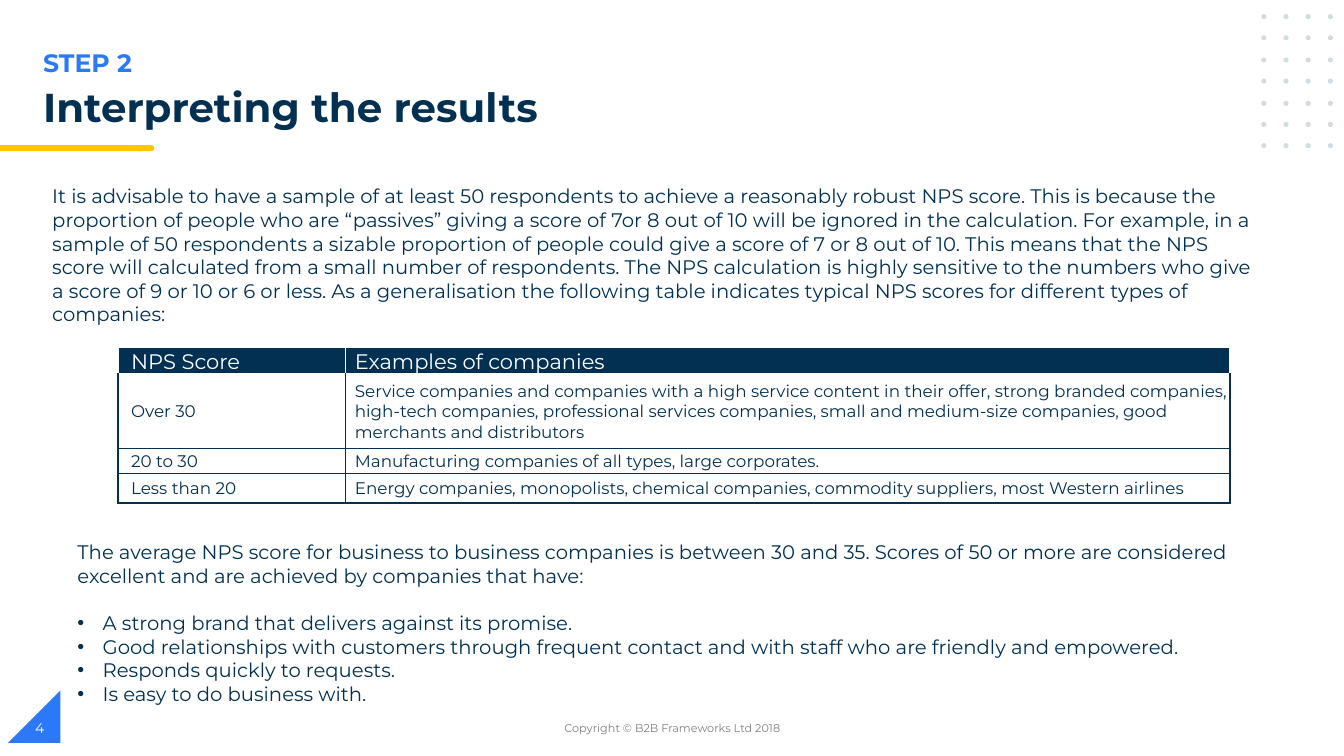
from dataclasses import dataclass

from lxml import etree
from pptx import Presentation
from pptx.dml.color import RGBColor
from pptx.enum.shapes import MSO_SHAPE
from pptx.enum.text import MSO_ANCHOR, PP_ALIGN
from pptx.oxml.ns import qn
from pptx.util import Pt

PX = 9144
FONT = "Montserrat"
NAVY, BLUE, YELLOW = "023053", "2B79F8", "FFC600"
WHITE, GREY, DOT = "FFFFFF", "7F7F7F", "D1DBE0"
TRIANGLE, OVAL = MSO_SHAPE.RIGHT_TRIANGLE, MSO_SHAPE.OVAL
BAR, BAR_END = MSO_SHAPE.RECTANGLE, MSO_SHAPE.FLOWCHART_TERMINATOR
TOP, MIDDLE = MSO_ANCHOR.TOP, MSO_ANCHOR.MIDDLE
LEFT, CENTER = PP_ALIGN.LEFT, PP_ALIGN.CENTER


@dataclass
class Decoration:
    kind: MSO_SHAPE
    box: tuple[int, int, int, int]
    color: str


@dataclass
class Label:
    box: tuple[int, int, int, int]
    text: str
    size: float
    color: str = NAVY
    bold: bool = False
    align: PP_ALIGN = LEFT
    anchor: MSO_ANCHOR = TOP
    spacing: float = 1.0
    bullets: tuple[str, ...] = ()


@dataclass
class ScoreRow:
    height: int
    score: str
    examples: str
    size: int = 12
    color: str = NAVY
    fill: str = ""
    border: str = NAVY
    top_border: str = NAVY


DECORATIONS = [
    Decoration(TRIANGLE, (8, 685, 52, 52), BLUE),
    *(
        Decoration(OVAL, (1251 + 22 * column, 14 + round(21.4 * row), 5, 5), DOT)
        for row in range(7)
        for column in range(4)
    ),
    Decoration(BAR_END, (134, 144, 19, 6), YELLOW),
    Decoration(BAR, (0, 144, 141, 6), YELLOW),
]

LABELS = [
    Label((33, 42, 669, 40), "STEP 2", 18, BLUE, bold=True),
    Label((33, 82, 956, 56), "Interpreting the results", 28.8, bold=True, spacing=0.9),
    Label(
        (42, 178, 1216, 175),
        "It is advisable to have a sample of at least 50 respondents to achieve a "
        "reasonably robust NPS score. This is because the proportion of people who are "
        "“passives” giving a score of 7or 8 out of 10 will be ignored in the calculation. "
        "For example, in a sample of 50 respondents a sizable proportion of people could "
        "give a score of 7 or 8 out of 10. This means that the NPS score will calculated "
        "from a small number of respondents. The NPS calculation is highly sensitive to "
        "the numbers who give a score of 9 or 10 or 6 or less. As a generalisation the "
        "following table indicates typical NPS scores for different types of companies:",
        14,
    ),
    Label(
        (67, 531, 1208, 175),
        "The average NPS score for business to business companies is between 30 and 35. "
        "Scores of 50 or more are considered excellent and are achieved by companies that have:",
        14,
        bullets=(
            "A strong brand that delivers against its promise.",
            "Good relationships with customers through frequent contact and with staff "
            "who are friendly and empowered.",
            "Responds quickly to requests.",
            "Is easy to do business with.",
        ),
    ),
    Label((442, 702, 450, 40), "Copyright © B2B Frameworks Ltd 2018", 8, GREY,
          align=CENTER, anchor=MIDDLE),
    Label((25, 702, 300, 40), "4", 10, WHITE, anchor=MIDDLE),
]

TABLE_LEFT, TABLE_TOP = 117, 345
COLUMN_WIDTHS = (226, 877)
CELL_INDENTS = (13, 9)
SCORE_ROWS = [
    ScoreRow(25, "NPS Score", "Examples of companies", 15, WHITE, NAVY, WHITE, WHITE),
    ScoreRow(
        74,
        "Over 30",
        "Service companies and companies with a high service content in their offer, "
        "strong branded companies, high-tech companies, professional services companies, "
        "small and medium-size companies, good merchants and distributors",
        top_border=WHITE,
    ),
    ScoreRow(25, "20 to 30", "Manufacturing companies of all types, large corporates."),
    ScoreRow(
        29,
        "Less than 20",
        "Energy companies, monopolists, chemical companies, commodity suppliers, "
        "most Western airlines",
    ),
]


def rgb(color: str) -> RGBColor:
    return RGBColor.from_string(color)


def set_font(paragraph, size: float, color: str, bold: bool = False) -> None:
    font = paragraph.font
    font.name, font.size, font.bold = FONT, Pt(size), bold
    font.color.rgb = rgb(color)


def draw_decoration(slide, decoration: Decoration) -> None:
    shape = slide.shapes.add_shape(decoration.kind, *(n * PX for n in decoration.box))
    shape.shadow.inherit = False
    shape.fill.solid()
    shape.fill.fore_color.rgb = rgb(decoration.color)
    shape.line.fill.background()
    if decoration.kind == TRIANGLE:
        shape.element.spPr.xfrm.set("flipH", "1")


def add_bullet(paragraph, color: str) -> None:
    properties = paragraph._p.get_or_add_pPr()
    properties.set("marL", str(25 * PX))
    properties.set("indent", str(-25 * PX))
    bullet_color = etree.SubElement(properties, qn("a:buClr"))
    etree.SubElement(bullet_color, qn("a:srgbClr"), val=color)
    etree.SubElement(properties, qn("a:buFont"), typeface="Arial")
    etree.SubElement(properties, qn("a:buChar"), char="•")


def draw_label(slide, label: Label) -> None:
    frame = slide.shapes.add_textbox(*(n * PX for n in label.box)).text_frame
    frame.word_wrap = True
    frame.vertical_anchor = label.anchor
    lead = frame.paragraphs[0]
    lead.text = label.text
    lead.alignment = label.align
    lead.line_spacing = label.spacing
    set_font(lead, label.size, label.color, label.bold)
    for position, bullet in enumerate(label.bullets):
        item = frame.add_paragraph()
        item.text = bullet
        add_bullet(item, label.color)
        item.space_before = Pt(0 if position else 17)
        set_font(item, label.size, label.color)


def set_borders(cell, row: ScoreRow) -> None:
    properties = cell._tc.get_or_add_tcPr()
    for position, side in enumerate("LRTB"):
        line = etree.Element(qn(f"a:ln{side}"), w=str(Pt(1)))
        fill = etree.SubElement(line, qn("a:solidFill"))
        color = row.top_border if side == "T" else row.border
        etree.SubElement(fill, qn("a:srgbClr"), val=color)
        properties.insert(position, line)


def draw_cell(cell, text: str, indent: int, row: ScoreRow) -> None:
    cell.margin_left, cell.margin_right = indent * PX, PX
    cell.margin_top, cell.margin_bottom = PX, 0
    cell.vertical_anchor = MIDDLE
    if row.fill:
        cell.fill.solid()
        cell.fill.fore_color.rgb = rgb(row.fill)
    else:
        cell.fill.background()
    set_borders(cell, row)
    cell.text = text
    set_font(cell.text_frame.paragraphs[0], row.size, row.color)


def draw_score_table(slide) -> None:
    width, height = sum(COLUMN_WIDTHS), sum(row.height for row in SCORE_ROWS)
    table = slide.shapes.add_table(
        len(SCORE_ROWS), len(COLUMN_WIDTHS),
        TABLE_LEFT * PX, TABLE_TOP * PX, width * PX, height * PX,
    ).table
    table.first_row = table.horz_banding = False
    for column, column_width in zip(table.columns, COLUMN_WIDTHS):
        column.width = column_width * PX
    for table_row, row in zip(table.rows, SCORE_ROWS):
        table_row.height = row.height * PX
        for cell, text, indent in zip(table_row.cells, (row.score, row.examples), CELL_INDENTS):
            draw_cell(cell, text, indent, row)


def main() -> None:
    deck = Presentation()
    deck.slide_width, deck.slide_height = 1333 * PX, 750 * PX
    slide = deck.slides.add_slide(deck.slide_layouts[6])
    for decoration in DECORATIONS:
        draw_decoration(slide, decoration)
    for label in LABELS:
        draw_label(slide, label)
    draw_score_table(slide)
    deck.save("out.pptx")


if __name__ == "__main__":
    main()
